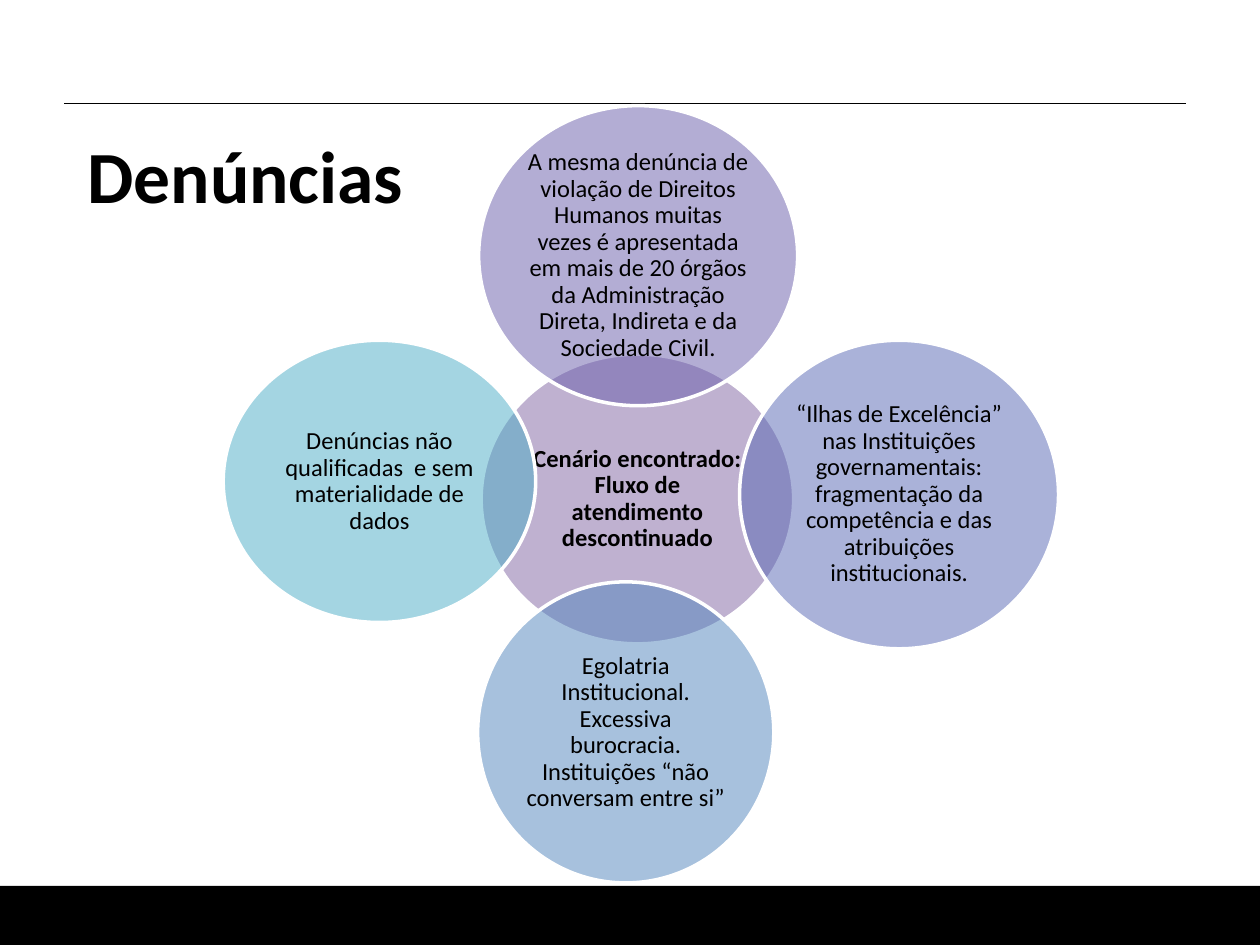
import math

import pptx
import pptx.dml.color
import pptx.enum.shapes
import pptx.enum.text
import pptx.oxml.ns
import pptx.oxml.xmlchemy
import pptx.util
from pptx.util import Cm

# Share of each side lying outside the text area of an ellipse
ELLIPSE_INSET = (1 - math.sqrt(0.5)) / 2

# Left, top, width, height in cm, fill, text, bold
CIRCLES = [
    (9.7, 7.14, 6.3, 5.84, "8064A2",
     "Cenário encontrado: Fluxo de atendimento descontinuado", True),
    (9.65, 2.13, 6.43, 6.05, "685DAB",
     "A mesma denúncia de violação de Direitos Humanos muitas vezes é apresentada "
     "em mais de 20 órgãos da Administração Direta, Indireta e da Sociedade Civil.", False),
    (14.91, 6.86, 6.43, 6.22, "5767B4",
     "“Ilhas de Excelência” nas Instituições governamentais: fragmentação da "
     "competência e das atribuições institucionais.", False),
    (9.63, 11.73, 5.97, 6.07, "5185BD",
     "Egolatria Institucional. Excessiva burocracia. "
     "Instituições “não conversam entre si”", False),
    (4.5, 6.86, 6.3, 5.69, "4BACC6",
     "Denúncias não qualificadas  e sem materialidade de dados", False),
]


def color(value):
    return pptx.dml.color.RGBColor.from_string(value)


def add_filled(page, kind, left, top, width, height, fill):
    shape = page.shapes.add_shape(kind, Cm(left), Cm(top), Cm(width), Cm(height))
    shape.shadow.inherit = False
    shape.fill.solid()
    shape.fill.fore_color.rgb = color(fill)
    shape.line.fill.background()
    return shape


def set_opacity(shape, percent):
    tint = shape._element.spPr.find(
        pptx.oxml.ns.qn("a:solidFill") + "/" + pptx.oxml.ns.qn("a:srgbClr"))
    alpha = pptx.oxml.xmlchemy.OxmlElement("a:alpha")
    alpha.set("val", str(percent * 1000))
    tint.append(alpha)


def add_text(page, text, left, top, width, height, size=14, bold=False,
             anchor="TOP", margin=None, spacing=None):
    box = page.shapes.add_textbox(Cm(left), Cm(top), Cm(width), Cm(height))
    frame = box.text_frame
    frame.word_wrap = True
    frame.vertical_anchor = pptx.enum.text.MSO_ANCHOR[anchor]
    if margin is not None:
        frame.margin_left = frame.margin_right = Cm(margin)
        frame.margin_top = frame.margin_bottom = Cm(margin)
    para = frame.paragraphs[0]
    para.alignment = pptx.enum.text.PP_ALIGN.CENTER
    para.line_spacing = spacing
    span = para.add_run()
    span.text = text
    span.font.name = "Calibri"
    span.font.size = pptx.util.Pt(size)
    span.font.bold = bold
    span.font.color.rgb = color("000000")


def add_rule(page, left, right, top):
    rule = page.shapes.add_connector(
        pptx.enum.shapes.MSO_CONNECTOR.STRAIGHT, Cm(left), Cm(top), Cm(right), Cm(top))
    rule.line.color.rgb = color("000000")
    rule.line.width = pptx.util.Pt(0.75)
    rule._element.spPr.append(pptx.oxml.xmlchemy.OxmlElement("a:effectLst"))


def add_circle(page, left, top, width, height, fill, text, bold):
    """Add a translucent ellipse with its text inside."""
    circle = add_filled(page, pptx.enum.shapes.MSO_SHAPE.OVAL,
                        left, top, width, height, fill)
    set_opacity(circle, 50)
    circle.line.color.rgb = color("FFFFFF")
    circle.line.width = pptx.util.Pt(2)
    inset_x, inset_y = width * ELLIPSE_INSET, height * ELLIPSE_INSET
    add_text(page, text, left + inset_x, top + inset_y,
             width - 2 * inset_x, height - 2 * inset_y,
             bold=bold, anchor="MIDDLE", margin=0.05, spacing=0.9)


def main():
    deck = pptx.Presentation()
    deck.slide_width, deck.slide_height = Cm(25.4), Cm(19.05)
    page = deck.slides.add_slide(deck.slide_layouts[6])
    add_filled(page, pptx.enum.shapes.MSO_SHAPE.RECTANGLE, 0, 17.86, 25.4, 1.19, "000000")
    add_rule(page, 1.3, 23.9, 2.08)
    for circle in CIRCLES:
        add_circle(page, *circle)
    add_text(page, "Denúncias", 0.2, 2.49, 9.5, 3.68, size=42, bold=True)
    deck.save("out.pptx")


if __name__ == "__main__":
    main()
